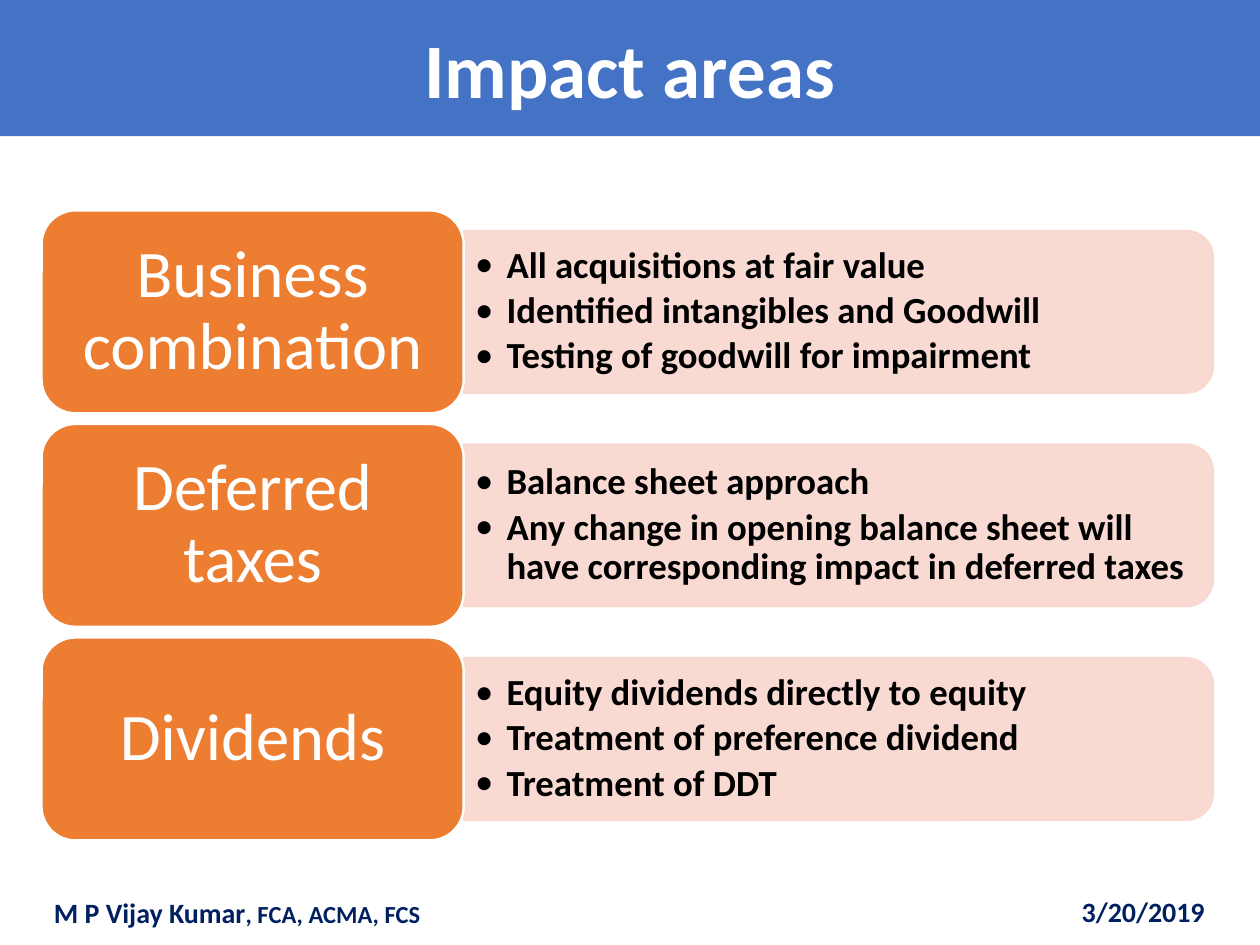
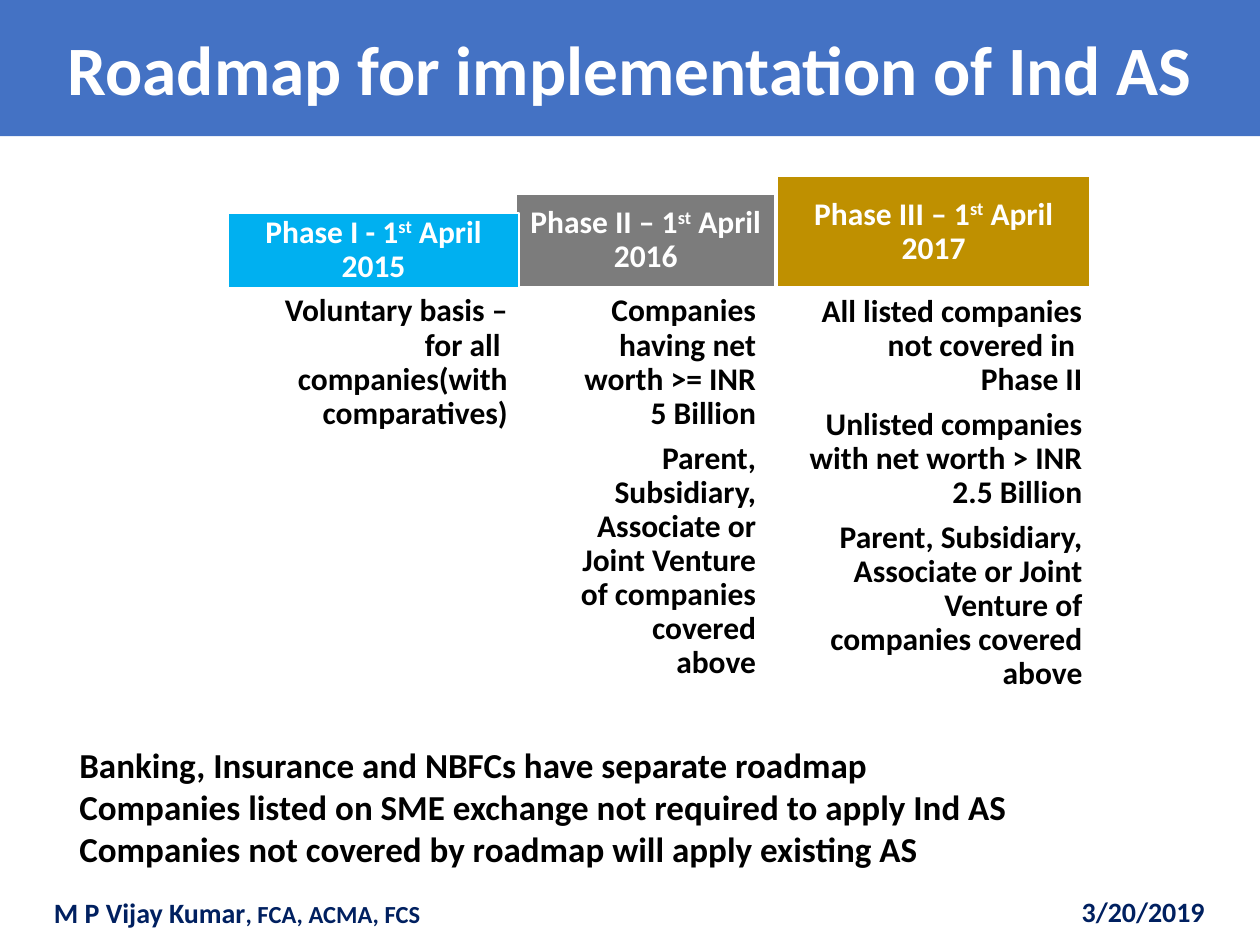
from dataclasses import dataclass

from lxml.etree import SubElement
from pptx import Presentation
from pptx.dml.color import RGBColor
from pptx.enum.shapes import MSO_SHAPE
from pptx.enum.text import MSO_ANCHOR, MSO_AUTO_SIZE, PP_ALIGN
from pptx.oxml.ns import qn
from pptx.util import Inches, Pt

# Shared style
FONT = "Calibri"
COLORS = {
    "band": "4472C4",
    "white": "FFFFFF",
    "black": "000000",
    "footer": "002060",
    "area": "ED7D31",
    "bar": "F8D7CE",
    "phase1": "00B0F0",
    "phase2": "7C7C7C",
    "phase3": "BF9000",
}
ROW_TOP, ROW_PITCH, ROW_HEIGHT = 1.67, 1.695, 1.61
AREA_LEFT, AREA_WIDTH = 0.33, 3.35
BAR_LENGTH, BAR_HEIGHT = 5.95, 1.29
POINTS_WIDTH, POINTS_HEIGHT = 5.89, 1.16
PHASE_BASE = 2.28


@dataclass
class Area:
    name: str
    points: list[str]


@dataclass
class Phase:
    name: str
    year: str
    color: str
    left: float
    width: float
    height: float
    body_left: float
    body_width: float
    body_height: float
    items: list[str]


AREAS = [
    Area("Business combination", [
        "All acquisitions at fair value",
        "Identified intangibles and Goodwill",
        "Testing of goodwill for impairment",
    ]),
    Area("Deferred taxes", [
        "Balance sheet approach",
        "Any change in opening balance sheet will have corresponding "
        "impact in deferred taxes",
    ]),
    Area("Dividends", [
        "Equity dividends directly to equity",
        "Treatment of preference dividend",
        "Treatment of DDT",
    ]),
]

GROUP_RULE = ("Parent, Subsidiary, Associate or Joint Venture of companies "
              "covered above")
# Later phases lie behind earlier ones
PHASES = [
    Phase("Phase III – 1", "2017", "phase3", 6.17, 2.48, 0.88,
          6.33, 2.32, 4.12,
          ["All listed companies not covered in \vPhase II",
           "Unlisted companies with net worth > INR 2.5 Billion", GROUP_RULE]),
    Phase("Phase II – 1", "2016", "phase2", 4.1, 2.05, 0.74,
          4.44, 1.62, 3.83,
          ["Companies having net worth >= INR 5 Billion", GROUP_RULE]),
    Phase("Phase I - 1", "2015", "phase1", 1.81, 2.31, 0.59,
          1.95, 2.14, 3.53,
          ["Voluntary basis – for all  companies(with comparatives)"]),
]
NOTES = [
    "Banking, Insurance and NBFCs have separate roadmap",
    "Companies listed on SME exchange not required to apply Ind AS",
    "Companies not covered by roadmap will apply existing AS",
]


# Helpers
def rgb(name: str) -> RGBColor:
    return RGBColor.from_string(COLORS[name])


def place(sp, left: float, top: float, width: float, height: float) -> None:
    sp.left, sp.top = Inches(left), Inches(top)
    sp.width, sp.height = Inches(width), Inches(height)


def format_runs(p, size: float, color: str, bold: bool = True) -> None:
    for r in p.runs:
        r.font.name, r.font.size, r.font.bold = FONT, Pt(size), bold
        r.font.color.rgb = rgb(color)


def set_paragraphs(tf, lines: list[str], size: float, color: str,
                   align=PP_ALIGN.LEFT, bold: bool = True,
                   spacing: float = 1.0, after: float = 0) -> None:
    """Fill a frame; `after` is a share of the text size."""
    for i, line in enumerate(lines):
        p = tf.paragraphs[0] if i == 0 else tf.add_paragraph()
        p.text = line
        p.alignment, p.line_spacing = align, spacing
        p.space_before, p.space_after = Pt(0), Pt(size * after)
        format_runs(p, size, color, bold)


def set_bullet(p, char: str = "", indent: float = 0) -> None:
    pPr = p._p.get_or_add_pPr()
    pPr.set("marL", str(Inches(indent)))
    pPr.set("indent", str(-Inches(indent)))
    if char:
        SubElement(pPr, qn("a:buFont")).set("typeface", FONT)
        SubElement(pPr, qn("a:buChar")).set("char", char)
    else:
        SubElement(pPr, qn("a:buNone"))


def set_frame(tf, across: float, down: float,
              anchor=MSO_ANCHOR.MIDDLE) -> None:
    tf.word_wrap, tf.vertical_anchor = True, anchor
    tf.margin_left = tf.margin_right = Inches(across)
    tf.margin_top = tf.margin_bottom = Inches(down)


def add_box(slide, kind, left: float, top: float, width: float, height: float,
            fill: str, line: str = "white", weight: float = 0.85):
    sp = slide.shapes.add_shape(kind, Inches(left), Inches(top),
                                Inches(width), Inches(height))
    sp.shadow.inherit = False
    sp.fill.solid()
    sp.fill.fore_color.rgb = rgb(fill)
    sp.line.color.rgb = rgb(line)
    sp.line.width = Pt(weight)
    return sp


def add_text(slide, left: float, top: float, width: float, height: float):
    sp = slide.shapes.add_textbox(Inches(left), Inches(top),
                                  Inches(width), Inches(height))
    sp.text_frame.word_wrap = True
    return sp.text_frame


def add_slide(prs, layout: int, title: str, size: float):
    """Start a slide with the title band and the footer."""
    slide = prs.slides.add_slide(prs.slide_layouts[layout])
    sp = slide.shapes.title
    place(sp, 0, 0, 10, 1.08)
    sp.fill.solid()
    sp.fill.fore_color.rgb = rgb("band")
    tf = sp.text_frame
    tf.auto_size, tf.vertical_anchor = MSO_AUTO_SIZE.NONE, MSO_ANCHOR.MIDDLE
    set_paragraphs(tf, [title], size, "white", PP_ALIGN.CENTER)

    tf = add_text(slide, 6.33, 7.05, 3.33, 0.4)
    set_paragraphs(tf, ["3/20/2019"], 16, "footer", PP_ALIGN.RIGHT)
    tf = add_text(slide, 0.33, 7.06, 3.92, 0.4)
    p = tf.paragraphs[0]
    for part in ("M P Vijay Kumar", ", FCA, ACMA, FCS"):
        p.add_run().text = part
    format_runs(p, 16, "footer")
    p.runs[1].font.size = Pt(14)
    return slide


# Slide 1: one row for each area
def draw_area(slide, area: Area, top: float) -> None:
    middle = top + ROW_HEIGHT / 2
    bar_left = AREA_LEFT + AREA_WIDTH
    # The bar is upright before its quarter turn
    bar = add_box(slide, MSO_SHAPE.ROUND_2_SAME_RECTANGLE,
                  bar_left + (BAR_LENGTH - BAR_HEIGHT) / 2,
                  middle - BAR_LENGTH / 2, BAR_HEIGHT, BAR_LENGTH,
                  "bar", "bar")
    bar.rotation = 90
    for color in bar.element.spPr.iter(qn("a:srgbClr")):
        SubElement(color, qn("a:alpha")).set("val", "90000")

    tf = add_text(slide, bar_left, middle - POINTS_HEIGHT / 2,
                  POINTS_WIDTH, POINTS_HEIGHT)
    set_frame(tf, 0.09, 0.04)
    set_paragraphs(tf, area.points, 21, "black", spacing=0.9, after=0.15)
    for p in tf.paragraphs:
        set_bullet(p, "•", 0.25)

    sp = add_box(slide, MSO_SHAPE.ROUNDED_RECTANGLE, AREA_LEFT, top,
                 AREA_WIDTH, ROW_HEIGHT, "area", weight=1.35)
    set_frame(sp.text_frame, 0.16, 0.08)
    set_paragraphs(sp.text_frame, [area.name], 38, "white", PP_ALIGN.CENTER,
                   bold=False, spacing=0.9, after=0.35)


def build_impact(prs) -> None:
    slide = add_slide(prs, 5, "Impact areas", 44)
    for i, area in enumerate(AREAS):
        draw_area(slide, area, ROW_TOP + i * ROW_PITCH)


# Slide 2: phases rising like steps, with notes below
def draw_phase(slide, phase: Phase) -> None:
    tf = add_text(slide, phase.body_left, PHASE_BASE,
                  phase.body_width, phase.body_height)
    set_frame(tf, 0.06, 0.06, MSO_ANCHOR.TOP)
    set_paragraphs(tf, phase.items, 18, "black", PP_ALIGN.RIGHT,
                   spacing=0.9, after=0.35)

    sp = add_box(slide, MSO_SHAPE.RECTANGLE, phase.left,
                 PHASE_BASE - phase.height, phase.width, phase.height,
                 phase.color)
    tf = sp.text_frame
    set_frame(tf, 0.06, 0.06)
    set_paragraphs(tf, [phase.name], 18, "white", PP_ALIGN.CENTER,
                   spacing=0.9, after=0.35)
    p = tf.paragraphs[0]
    for part in ("st", f" April {phase.year}"):
        p.add_run().text = part
    format_runs(p, 18, "white")
    p.runs[1]._r.get_or_add_rPr().set("baseline", "30000")


def build_roadmap(prs) -> None:
    slide = add_slide(prs, 1, "Roadmap for implementation of Ind AS", 39.6)
    for phase in PHASES:
        draw_phase(slide, phase)
    body = slide.placeholders[1]
    place(body, 0.53, 5.85, 8.93, 1.11)
    tf = body.text_frame
    tf.auto_size = MSO_AUTO_SIZE.NONE
    set_paragraphs(tf, NOTES, 20, "black")
    for p in tf.paragraphs:
        set_bullet(p)


def main() -> None:
    prs = Presentation()
    prs.slide_width, prs.slide_height = Inches(10), Inches(7.5)
    build_impact(prs)
    build_roadmap(prs)
    prs.save("out.pptx")


if __name__ == "__main__":
    main()
